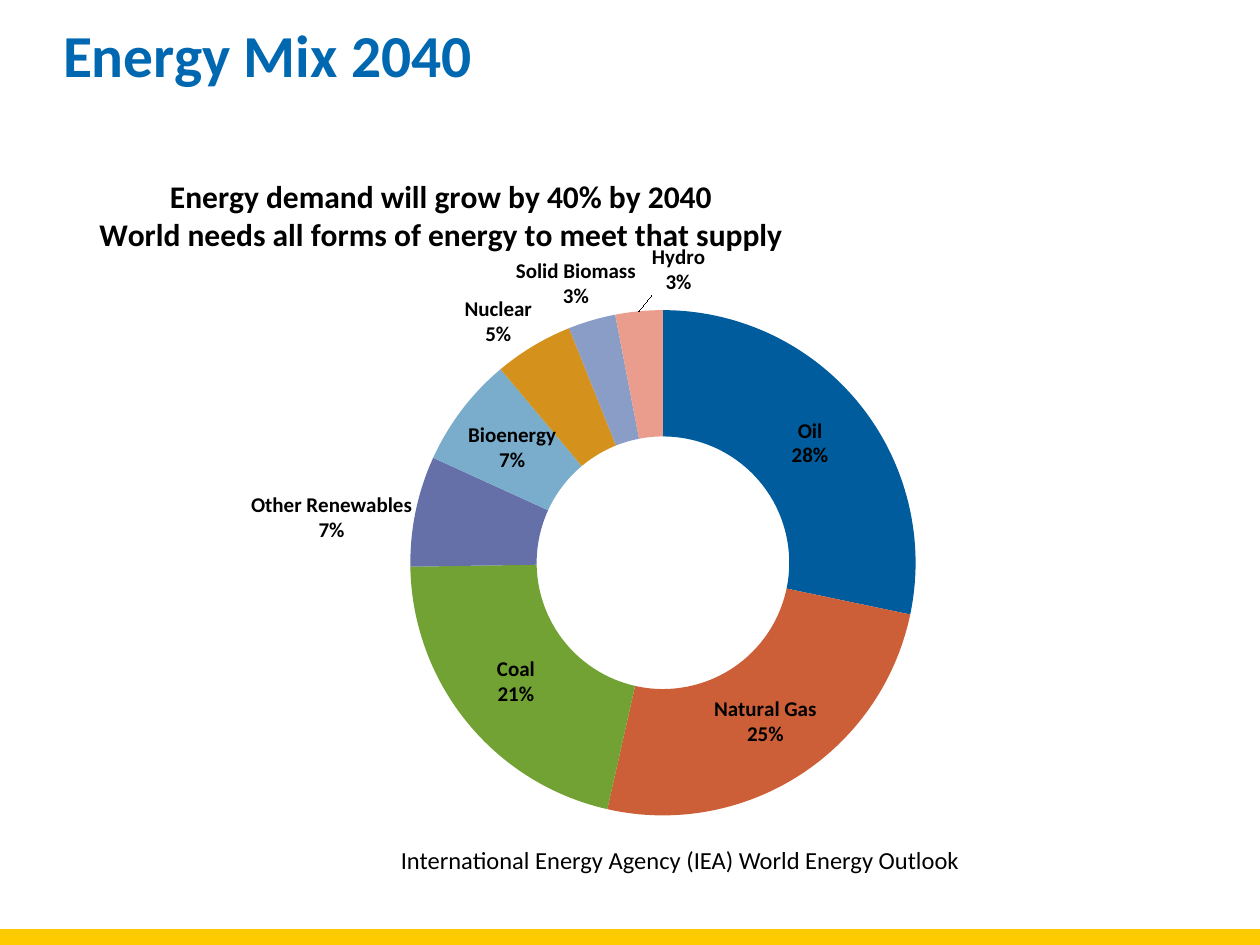
from copy import deepcopy

from pptx import Presentation
from pptx.chart.data import CategoryChartData
from pptx.dml.color import RGBColor
from pptx.enum.chart import XL_CHART_TYPE
from pptx.enum.shapes import MSO_SHAPE
from pptx.enum.text import MSO_ANCHOR, MSO_AUTO_SIZE, PP_ALIGN
from pptx.oxml.ns import qn
from pptx.util import Cm, Pt
from lxml import etree

DOUGHNUT = XL_CHART_TYPE.DOUGHNUT
RECTANGLE = MSO_SHAPE.RECTANGLE
MIDDLE = MSO_ANCHOR.MIDDLE
NO_AUTOFIT = MSO_AUTO_SIZE.NONE
LEFT, CENTER = PP_ALIGN.LEFT, PP_ALIGN.CENTER

BLUE = RGBColor(0x00, 0x67, 0xB1)
YELLOW = RGBColor(0xFE, 0xCB, 0x00)
BLACK = RGBColor(0, 0, 0)
FONT = "Calibri"

# name, percent, slice colour, label offset as a share of the chart size
ENERGY = [
    ("Oil", 28, RGBColor(0x00, 0x5C, 0x9C), None),
    ("Natural Gas", 25, RGBColor(0xCC, 0x5F, 0x38), None),
    ("Coal", 21, RGBColor(0x71, 0xA2, 0x33), None),
    ("Other Renewables", 7, RGBColor(0x65, 0x70, 0xA9), (-0.13, -0.01)),
    ("Bioenergy", 7, RGBColor(0x7A, 0xAD, 0xCC), None),
    ("Nuclear", 5, RGBColor(0xD4, 0x92, 0x1C), (-0.06, -0.12)),
    ("Solid Biomass", 3, RGBColor(0x89, 0x9D, 0xC7), (-0.03, -0.15)),
    ("Hydro", 3, RGBColor(0xEB, 0x9D, 0x8D), (0.03, -0.16)),
]


def write(tf, text, size, color=BLACK, bold=False, align=LEFT, spacing=None):
    for i, line in enumerate(text.split("\n")):
        p = tf.paragraphs[0] if i == 0 else tf.add_paragraph()
        p.alignment = align
        if spacing:
            p.line_spacing = spacing
        r = p.add_run()
        r.text = line
        r.font.name, r.font.size = FONT, Pt(size)
        r.font.bold, r.font.color.rgb = bold, color


def place(parent, index, **values):
    """Give a chart part a manual layout, as its child number index."""
    layout = parent.find(qn("c:layout"))
    if layout is None:
        layout = etree.Element(qn("c:layout"))
        parent.insert(index, layout)
    manual = etree.SubElement(layout, qn("c:manualLayout"))
    for name, value in values.items():
        etree.SubElement(manual, qn("c:" + name)).set("val", str(value))


prs = Presentation()
prs.slide_width, prs.slide_height = Cm(25.4), Cm(19.05)
s = prs.slides.add_slide(prs.slide_layouts[5])

bar = s.shapes.add_shape(RECTANGLE, Cm(0), Cm(18.73), Cm(25.4), Cm(0.32))
bar.shadow.inherit = False
bar.fill.solid()
bar.fill.fore_color.rgb = YELLOW
bar.line.fill.background()

title = s.shapes.title
title.left, title.top, title.width, title.height = Cm(1.27), Cm(0.3), Cm(22.94), Cm(1.85)
source = s.shapes.add_textbox(Cm(8.08), Cm(17.04), Cm(11.28), Cm(0.84))
for sp in (title, source):
    tf = sp.text_frame
    tf.margin_left = tf.margin_top = tf.margin_right = tf.margin_bottom = 0
    tf.auto_size = NO_AUTOFIT
title.text_frame.word_wrap = False
title.text_frame.vertical_anchor = MIDDLE
source.text_frame.word_wrap = True
write(title.text_frame, "Energy Mix 2040", 34, color=BLUE, bold=True, spacing=0.8)
write(source.text_frame, "International Energy Agency (IEA) World Energy Outlook", 14)

data = CategoryChartData()
data.categories = [name for name, *_ in ENERGY]
data.add_series("Series 1", [percent for _, percent, *_ in ENERGY])
chart = s.shapes.add_chart(DOUGHNUT, Cm(1.7), Cm(3.33), Cm(22.63), Cm(13.11), data).chart
chart.has_legend = False
chart.font.name, chart.font.size = FONT, Pt(18)
chart.font.color.rgb = BLACK
chart.has_title = True
write(chart.chart_title.text_frame,
      "Energy demand will grow by 40% by 2040\n"
      "World needs all forms of energy to meet that supply",
      18, bold=True, align=CENTER)
place(chart.element.find(".//" + qn("c:title")), 1,
      xMode="edge", yMode="edge", x=0.01, y=0.01)
place(chart.element.find(".//" + qn("c:plotArea")), 0, layoutTarget="inner",
      xMode="edge", yMode="edge", x=0.225, y=0.223, w=0.581, h=0.777)

chart.plots[0].vary_by_categories = True
series = chart.plots[0].series[0]
labels = series.data_labels
labels.show_category_name = labels.show_percentage = True
labels.show_value = False
labels.number_format, labels.number_format_is_linked = "0%", False
labels.font.name, labels.font.size = FONT, Pt(12)
labels.font.bold, labels.font.color.rgb = True, BLACK

# A moved label repeats the settings of the series labels
d_lbls = chart.element.find(".//" + qn("c:ser")).find(qn("c:dLbls"))
settings = [e for e in d_lbls if e.tag not in (qn("c:showLeaderLines"), qn("c:leaderLines"))]
moved = 0
for i, (_, _, color, offset) in enumerate(ENERGY):
    point = series.points[i].format
    point.fill.solid()
    point.fill.fore_color.rgb = color
    point.line.fill.background()
    if offset:
        d_lbl = etree.Element(qn("c:dLbl"))
        etree.SubElement(d_lbl, qn("c:idx")).set("val", str(i))
        place(d_lbl, 1, x=offset[0], y=offset[1])
        d_lbl.extend(deepcopy(settings))
        d_lbls.insert(moved, d_lbl)
        moved += 1

prs.save("out.pptx")
